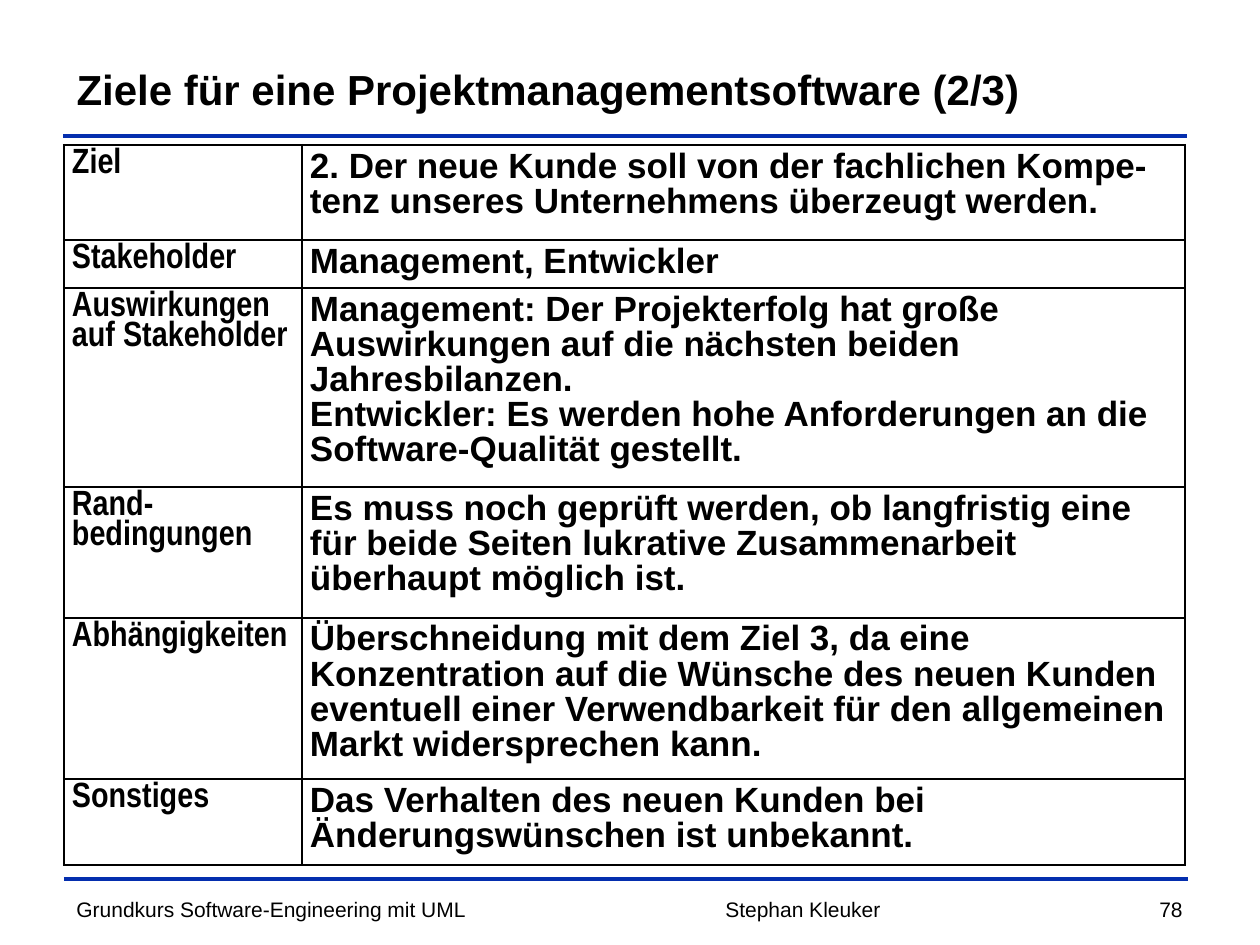
from dataclasses import dataclass

from lxml.etree import SubElement
from pptx import Presentation
from pptx.dml.color import RGBColor
from pptx.enum.shapes import MSO_CONNECTOR
from pptx.enum.text import MSO_ANCHOR, PP_ALIGN
from pptx.oxml.ns import qn
from pptx.util import Emu, Pt

HUES = {"ink": "000000", "rule": "042EAE"}
WIDE, NARROW = "Arial", "Arial Narrow"


@dataclass
class Row:
    high: int
    head: str
    body: str


@dataclass
class Note:
    left: int
    width: int
    text: str
    align: PP_ALIGN


ROWS = [
    Row(95, "Ziel", "2. Der neue Kunde soll von der fachlichen Kompe-tenz "
        "unseres Unternehmens überzeugt werden."),
    Row(48, "Stakeholder", "Management, Entwickler"),
    Row(198, "Auswirkungen auf Stakeholder",
        "Management: Der Projekterfolg hat große Auswirkungen auf die "
        "nächsten beiden Jahresbilanzen.\n"
        "Entwickler: Es werden hohe Anforderungen an die "
        "Software-Qualität gestellt."),
    Row(131, "Rand-bedingungen",
        "Es muss noch geprüft werden, ob langfristig eine für beide Seiten "
        "lukrative Zusammenarbeit überhaupt möglich ist."),
    Row(161, "Abhängigkeiten",
        "Überschneidung mit dem Ziel 3, da eine Konzentration auf die "
        "Wünsche des neuen Kunden eventuell einer Verwendbarkeit für den "
        "allgemeinen Markt widersprechen kann."),
    Row(86, "Sonstiges", "Das Verhalten des neuen Kunden bei "
        "Änderungswünschen ist unbekannt."),
]
COLS = [238, 883]
NOTES = [
    Note(64, 436, "Grundkurs Software-Engineering mit UML", PP_ALIGN.LEFT),
    Note(679, 248, "Stephan Kleuker", PP_ALIGN.CENTER),
    Note(898, 297, "78", PP_ALIGN.RIGHT),
]


def px(n: int) -> Emu:
    return Emu(round(n * 914400 / 126))


def write(frame, text: str, *, size: int, font: str = WIDE, bold: bool = False,
          align=PP_ALIGN.LEFT, space: float = 1.0) -> None:
    frame.word_wrap = True
    for i, line in enumerate(text.split("\n")):
        para = frame.add_paragraph() if i else frame.paragraphs[0]
        para.alignment = align
        para.line_spacing = space
        para.space_before = para.space_after = Pt(0)
        run = para.add_run()
        run.text = line
        run.font.size = Pt(size)
        run.font.name = font
        run.font.bold = bold
        run.font.color.rgb = RGBColor.from_string(HUES["ink"])


def rule(slide, left: int, top: int, width: int) -> None:
    line = slide.shapes.add_connector(
        MSO_CONNECTOR.STRAIGHT, px(left), px(top), px(left + width), px(top))
    line.line.color.rgb = RGBColor.from_string(HUES["rule"])
    line.line.width = Pt(2)
    SubElement(line._element.spPr, qn("a:effectLst"))


def frame_cell(cell) -> None:
    props = cell._tc.get_or_add_tcPr()
    for side in ("lnL", "lnR", "lnT", "lnB"):
        edge = SubElement(props, qn(f"a:{side}"), w=str(Pt(1.5)))
        fill = SubElement(edge, qn("a:solidFill"))
        SubElement(fill, qn("a:srgbClr"), val=HUES["ink"])
    cell.fill.background()


def fill_cell(cell, text: str, font: str) -> None:
    cell.margin_left = cell.margin_right = px(8)
    cell.margin_top = cell.margin_bottom = px(5)
    cell.vertical_anchor = MSO_ANCHOR.TOP
    write(cell.text_frame, text, size=20, font=font, bold=True, space=0.9)
    frame_cell(cell)


def add_goals(slide) -> None:
    table = slide.shapes.add_table(
        len(ROWS), len(COLS), px(64), px(145), px(sum(COLS)),
        px(sum(row.high for row in ROWS))).table
    table.first_row = table.horz_banding = False
    for col, width in zip(table.columns, COLS):
        col.width = px(width)
    for i, row in enumerate(ROWS):
        table.rows[i].height = px(row.high)
        fill_cell(table.cell(i, 0), row.head, NARROW)
        fill_cell(table.cell(i, 1), row.body, WIDE)


def main() -> None:
    deck = Presentation()
    deck.slide_width, deck.slide_height = px(1260), px(945)
    slide = deck.slides.add_slide(deck.slide_layouts[5])

    # Title
    title = slide.shapes.title
    title.left, title.top, title.width, title.height = map(
        px, (64, 35, 1121, 107))
    title.text_frame.vertical_anchor = MSO_ANCHOR.MIDDLE
    write(title.text_frame, "Ziele für eine Projektmanagementsoftware (2/3)",
          size=24, bold=True)

    # Rules above and below the table
    rule(slide, 63, 136, 1124)
    rule(slide, 64, 879, 1124)

    # Footer
    for note in NOTES:
        box = slide.shapes.add_textbox(
            px(note.left), px(890), px(note.width), px(37))
        write(box.text_frame, note.text, size=12, align=note.align)

    # Table of goals
    add_goals(slide)
    deck.save("out.pptx")


if __name__ == "__main__":
    main()
